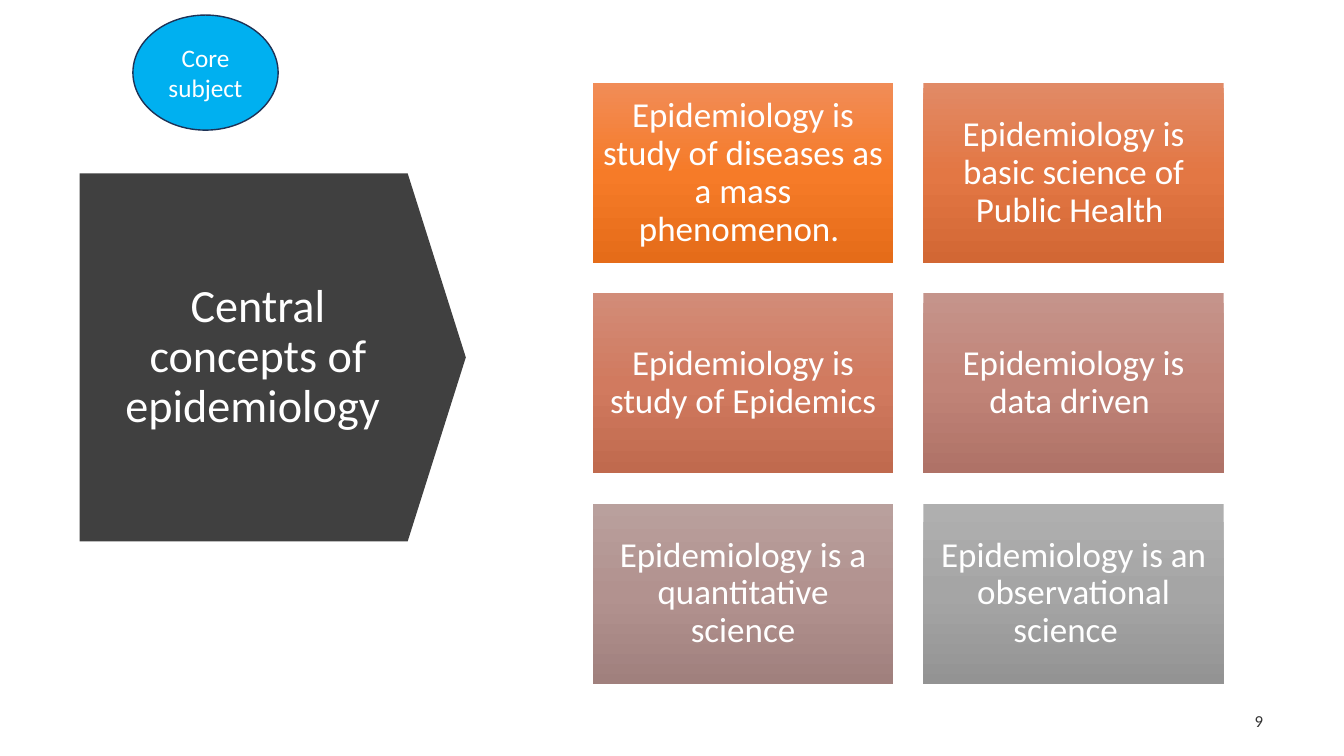
import copy
from dataclasses import dataclass

import pptx
import pptx.dml.color
import pptx.enum.shapes
import pptx.enum.text
import pptx.oxml.ns
import pptx.util

Cm = pptx.util.Cm
Align = pptx.enum.text.PP_ALIGN
Preset = pptx.enum.shapes.MSO_SHAPE


@dataclass(frozen=True)
class Theme:
    font: str = "Calibri"
    white: str = "FFFFFF"
    arrow: str = "404040"
    badge: str = "00B0F0"
    badge_line: str = "1E3256"
    number: str = "333333"
    title_size: int = 33
    concept_size: int = 25
    badge_size: int = 18
    number_size: int = 12


@dataclass(frozen=True)
class Frame:
    """Left, top, width and height in centimetres."""
    left: float
    top: float
    width: float
    height: float

    def lengths(self) -> list[int]:
        return [Cm(value) for value in (self.left, self.top, self.width, self.height)]


@dataclass(frozen=True)
class Concept:
    text: str
    gradient: tuple[str, str, str]


THEME = Theme()
COLUMNS = 2
FIRST_BOX = Frame(14.94, 2.09, 7.57, 4.54)
COLUMN_STEP, ROW_STEP = 8.33, 5.3
CONCEPTS = [
    Concept("Epidemiology is study of diseases as a mass phenomenon. ",
            ("F18C57", "F67B28", "E56C19")),
    Concept("Epidemiology is basic science of Public Health ",
            ("E18A66", "E37744", "D26734")),
    Concept("Epidemiology is study of Epidemics",
            ("D28C78", "D17A5F", "C06A4E")),
    Concept("Epidemiology is data driven ",
            ("C5948B", "C18478", "AF7267")),
    Concept("Epidemiology is a quantitative science",
            ("B9A09D", "B2928F", "A0807D")),
    Concept("Epidemiology is an observational science  ",
            ("AFAFAF", "A5A5A5", "939393")),
]


def rgb(color: str) -> pptx.dml.color.RGBColor:
    return pptx.dml.color.RGBColor.from_string(color)


def apply(target, values: dict) -> None:
    for name, value in values.items():
        setattr(target, name, value)


def write_text(shape, text: str, size: int, color: str = THEME.white,
               alignment=Align.CENTER, spacing: float = 1.0, inset: float | None = None) -> None:
    frame = shape.text_frame
    apply(frame, {"word_wrap": True, "vertical_anchor": pptx.enum.text.MSO_ANCHOR.MIDDLE})
    if inset is not None:
        sides = ("left", "top", "right", "bottom")
        apply(frame, {f"margin_{side}": Cm(inset) for side in sides})
    paragraph = frame.paragraphs[0]
    apply(paragraph, {"alignment": alignment, "line_spacing": spacing})
    run = paragraph.add_run()
    run.text = text
    apply(run.font, {"name": THEME.font, "size": pptx.util.Pt(size)})
    run.font.color.rgb = rgb(color)


def add_shape(slide, preset, frame: Frame, fill: str | None = None):
    shape = slide.shapes.add_shape(preset, *frame.lengths())
    shape.shadow.inherit = False
    shape.line.fill.background()
    if fill:
        shape.fill.solid()
        shape.fill.fore_color.rgb = rgb(fill)
    return shape


def fill_gradient(shape, colors: tuple[str, str, str]) -> None:
    """Fill from top to bottom with three evenly placed stops."""
    shape.fill.gradient()
    shape.fill.gradient_angle = 270
    stop_list = shape._element.spPr.find(".//" + pptx.oxml.ns.qn("a:gsLst"))
    stop_list.append(copy.deepcopy(stop_list[0]))
    for index, (stop, color) in enumerate(zip(shape.fill.gradient_stops, colors)):
        stop.position = index / 2
        stop.color.rgb = rgb(color)


def add_concept(slide, index: int, concept: Concept) -> None:
    row, column = divmod(index, COLUMNS)
    frame = Frame(FIRST_BOX.left + column * COLUMN_STEP, FIRST_BOX.top + row * ROW_STEP,
                  FIRST_BOX.width, FIRST_BOX.height)
    box = add_shape(slide, Preset.RECTANGLE, frame)
    fill_gradient(box, concept.gradient)
    write_text(box, concept.text, THEME.concept_size, spacing=0.9, inset=0.25)


def main() -> None:
    presentation = pptx.Presentation()
    apply(presentation, {"slide_width": Cm(33.87), "slide_height": Cm(19.05)})
    slide = presentation.slides.add_slide(presentation.slide_layouts[6])

    # Arrow pointing at the concepts, with the title over it
    arrow = add_shape(slide, Preset.DOWN_ARROW, Frame(2.24, 4.14, 9.27, 9.73), THEME.arrow)
    arrow.rotation = 270
    arrow.adjustments[0], arrow.adjustments[1] = 1, 0.158
    title = slide.shapes.add_textbox(*Frame(2.84, 5.46, 7.32, 7.09).lengths())
    write_text(title, "Central concepts of epidemiology ", THEME.title_size, spacing=0.9)

    # Slide number
    number = slide.shapes.add_textbox(*Frame(30.66, 17.65, 1.42, 1.02).lengths())
    write_text(number, "9", THEME.number_size, THEME.number, Align.RIGHT)

    # Grid of concepts
    for index, concept in enumerate(CONCEPTS):
        add_concept(slide, index, concept)

    # Subject badge
    badge = add_shape(slide, Preset.OVAL, Frame(3.35, 0.38, 3.66, 2.9), THEME.badge)
    badge.line.color.rgb = rgb(THEME.badge_line)
    badge.line.width = pptx.util.Pt(1)
    write_text(badge, "Core subject", THEME.badge_size)

    presentation.save("out.pptx")


if __name__ == "__main__":
    main()
